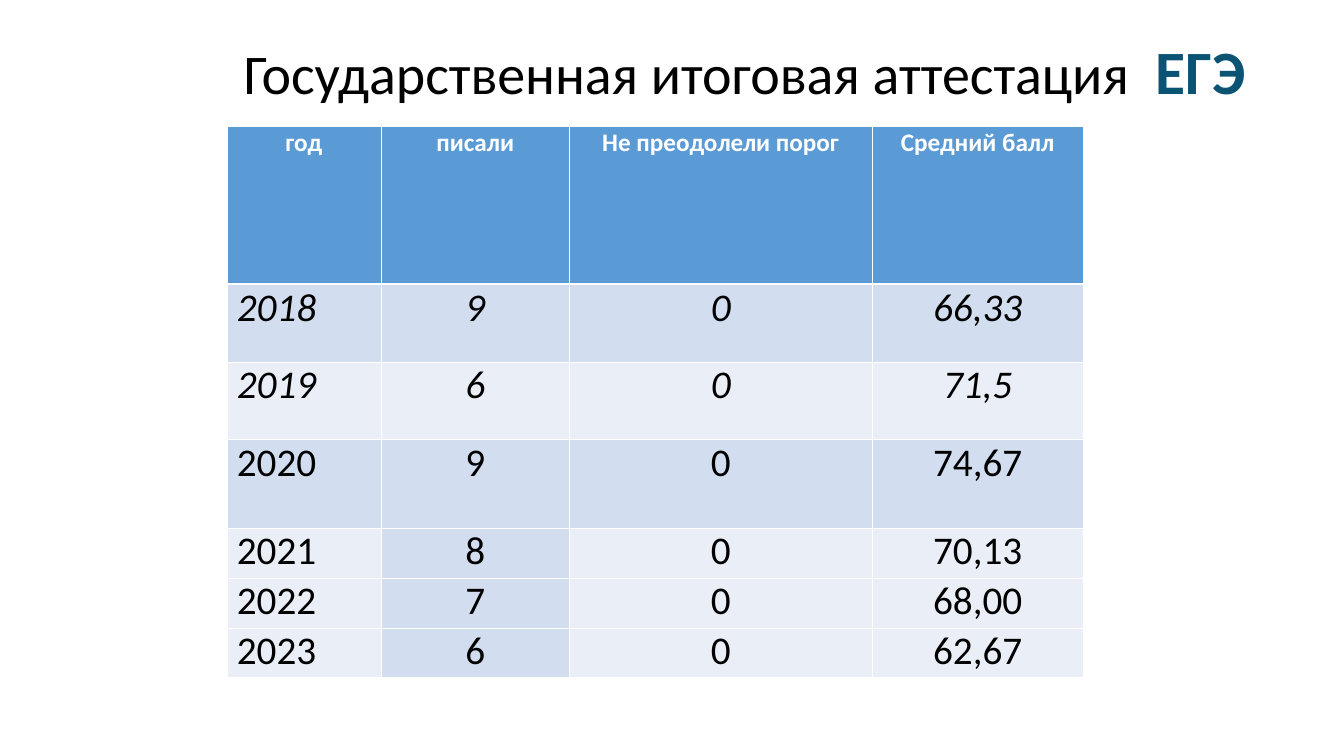
"""Build a slide with a table of state exam results by year."""
from dataclasses import dataclass
from typing import Any

from lxml.etree import SubElement
from pptx import Presentation
from pptx.dml.color import RGBColor
from pptx.enum.text import MSO_ANCHOR, MSO_AUTO_SIZE, PP_ALIGN
from pptx.oxml.ns import qn
from pptx.util import Inches, Length, Pt

GRID_COLUMNS, GRID_ROWS = 160, 90
UNIT = Inches(1) / 12


@dataclass(frozen=True)
class Theme:
    font: str = "Calibri"
    black: str = "000000"
    white: str = "FFFFFF"
    accent: str = "0A5373"
    header: str = "5B9BD5"
    dark_band: str = "D2DEEF"
    light_band: str = "EAEFF7"
    title_size: float = 40
    accent_size: float = 44
    header_size: float = 18
    body_size: float = 28
    thin_line: float = 0.45
    thick_line: float = 1.47


THEME = Theme()


@dataclass(frozen=True)
class Row:
    values: tuple[str, ...]
    height: float
    fills: tuple[str, ...]
    italic: bool = False
    header: bool = False
    below_header: bool = False


SOLID_DARK = (THEME.dark_band,) * 4
SOLID_LIGHT = (THEME.light_band,) * 4
DARK_SECOND = (THEME.light_band, THEME.dark_band, THEME.light_band, THEME.light_band)
COLUMN_WIDTHS = (18.36, 22.44, 36, 25.2)
ROWS = (
    Row(("год", "писали", "Не преодолели порог", "Средний балл"), 18.84,
        (THEME.header,) * 4, header=True),
    Row(("2018", "9", "0", "66,33"), 9.24, SOLID_DARK, italic=True, below_header=True),
    Row(("2019", "6", "0", "71,5"), 9.24, SOLID_LIGHT, italic=True),
    Row(("2020", "9", "0", "74,67"), 10.56, SOLID_DARK),
    Row(("2021", "8", "0", "70,13"), 5.88, DARK_SECOND),
    Row(("2022", "7", "0", "68,00"), 5.88, DARK_SECOND),
    Row(("2023", "6", "0", "62,67"), 5.88, DARK_SECOND),
)


def grid(units: float) -> Length:
    """Convert grid units to a length."""
    return Length(round(units * UNIT))


def set_attributes(target: Any, values: dict[str, Any]) -> None:
    """Set every named attribute on the target."""
    for name, value in values.items():
        setattr(target, name, value)


def add_run(paragraph: Any, text: str, size: float, color: str,
            bold: bool = False, italic: bool = False) -> None:
    """Add a formatted run to a paragraph."""
    run = paragraph.add_run()
    run.text = text
    set_attributes(run.font, {"name": THEME.font, "size": Pt(size),
                              "bold": bold, "italic": italic})
    run.font.color.rgb = RGBColor.from_string(color)


def add_border(cell: Any, side: str, width: float) -> None:
    """Add a white border to one side of a cell."""
    properties = cell._tc.get_or_add_tcPr()
    line = SubElement(properties, qn(f"a:ln{side}"), w=str(Pt(width)))
    fill = SubElement(line, qn("a:solidFill"))
    SubElement(fill, qn("a:srgbClr"), val=THEME.white)


def fill_cell(cell: Any, row: Row, column: int) -> None:
    """Write and format one cell of the results table."""
    thick_sides = {"B": row.header, "T": row.below_header}
    for side in "LRTB":
        thick = thick_sides.get(side, False)
        add_border(cell, side, THEME.thick_line if thick else THEME.thin_line)
    cell.fill.solid()
    cell.fill.fore_color.rgb = RGBColor.from_string(row.fills[column])
    cell.vertical_anchor = MSO_ANCHOR.TOP
    paragraph = cell.text_frame.paragraphs[0]
    centered = row.header or column > 0
    set_attributes(paragraph, {
        "alignment": PP_ALIGN.CENTER if centered else PP_ALIGN.LEFT,
        "line_spacing": 0.83,
    })
    add_run(paragraph, row.values[column],
            THEME.header_size if row.header else THEME.body_size,
            THEME.white if row.header else THEME.black,
            bold=row.header, italic=row.italic)


def add_title(slide: Any) -> None:
    """Place and write the slide title."""
    title = slide.shapes.title
    set_attributes(title, {"left": grid(22), "top": grid(2.76),
                           "width": grid(133.32), "height": grid(12.24)})
    set_attributes(title.text_frame, {"word_wrap": True,
                                      "auto_size": MSO_AUTO_SIZE.NONE,
                                      "vertical_anchor": MSO_ANCHOR.MIDDLE})
    paragraph = title.text_frame.paragraphs[0]
    set_attributes(paragraph, {"alignment": PP_ALIGN.CENTER, "line_spacing": 0.9})
    add_run(paragraph, "Государственная итоговая аттестация ",
            THEME.title_size, THEME.black)
    add_run(paragraph, " ЕГЭ", THEME.accent_size, THEME.accent, bold=True)


def add_results(slide: Any) -> None:
    """Add the table of results by year."""
    frame = slide.shapes.add_table(
        len(ROWS), len(COLUMN_WIDTHS), grid(27), grid(15),
        grid(sum(COLUMN_WIDTHS)), grid(sum(row.height for row in ROWS)))
    table = frame.table
    for column, width in zip(table.columns, COLUMN_WIDTHS):
        column.width = grid(width)
    for index, row in enumerate(ROWS):
        table.rows[index].height = grid(row.height)
        for column in range(len(COLUMN_WIDTHS)):
            fill_cell(table.cell(index, column), row, column)


def main() -> None:
    """Create the presentation and save it."""
    presentation = Presentation()
    set_attributes(presentation, {"slide_width": grid(GRID_COLUMNS),
                                  "slide_height": grid(GRID_ROWS)})
    slide = presentation.slides.add_slide(presentation.slide_layouts[5])
    add_title(slide)
    add_results(slide)
    presentation.save("out.pptx")


if __name__ == "__main__":
    main()
